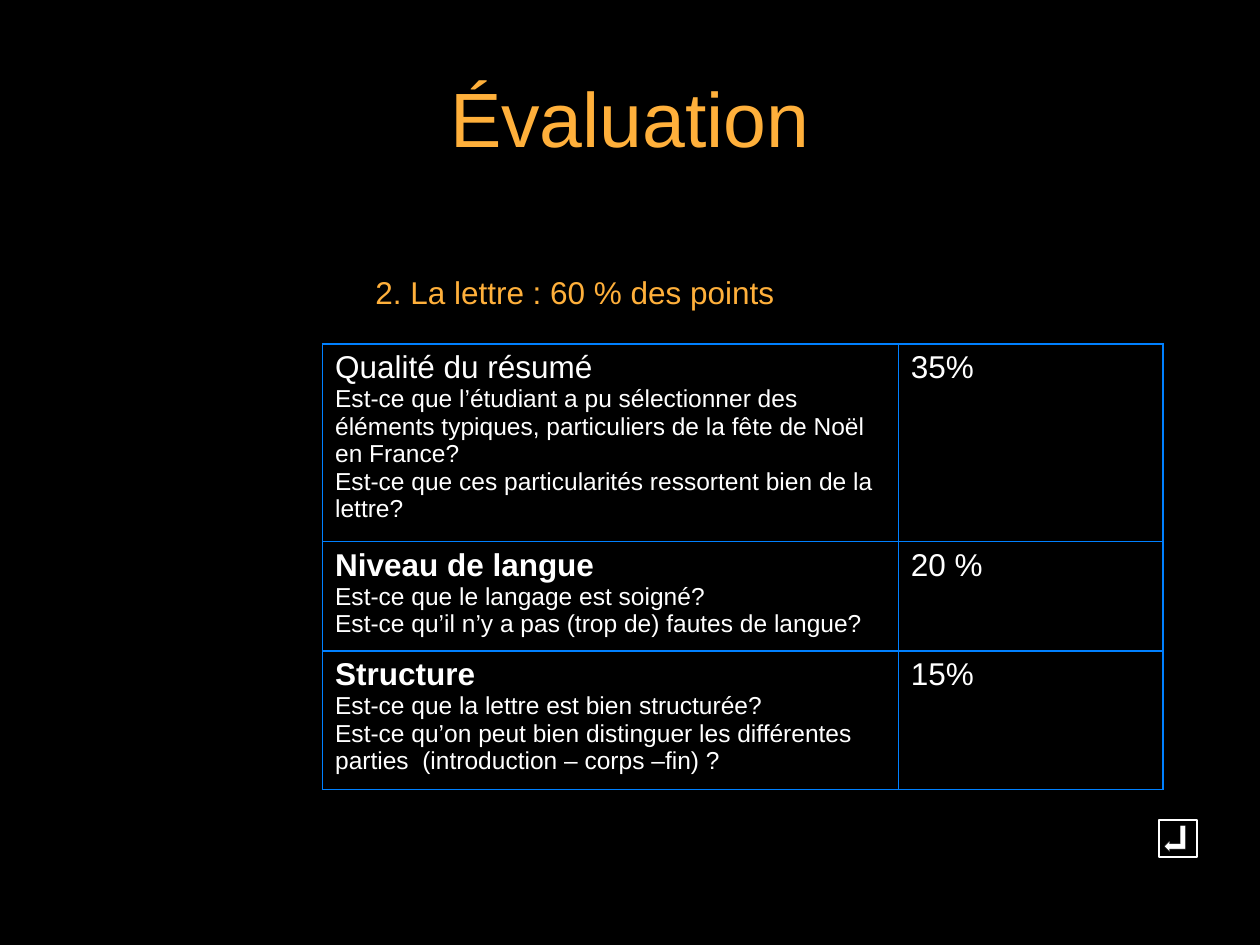
"""Build the evaluation slide with its grading table for the letter."""
import lxml.etree
import pptx
import pptx.dml.color
import pptx.enum.shapes
import pptx.enum.text
import pptx.oxml.ns
import pptx.util

Inches = pptx.util.Inches
Pt = pptx.util.Pt
RGBColor = pptx.dml.color.RGBColor
Shape = pptx.enum.shapes.MSO_SHAPE
Align = pptx.enum.text.PP_ALIGN
Anchor = pptx.enum.text.MSO_ANCHOR
qn = pptx.oxml.ns.qn

BLACK = RGBColor(0x00, 0x00, 0x00)
WHITE = RGBColor(0xFF, 0xFF, 0xFF)
ORANGE = RGBColor(0xFF, 0xB0, 0x3B)
BLUE = RGBColor(0x00, 0x80, 0xFF)
CHARCOAL = RGBColor(0x19, 0x19, 0x19)

TITLE = {"name": "Arial", "size": Pt(44)}
HEADING = {"name": "Arial", "size": Pt(18)}
BOLD_HEADING = {**HEADING, "bold": True}
QUESTION = {"name": "Arial", "size": Pt(14)}

COLUMN_WIDTHS = (4.57, 2.1)
CRITERIA = [
    (1.47, "Qualité du résumé", HEADING, "35%", [
        "Est-ce que l’étudiant a pu sélectionner des éléments typiques, "
        "particuliers de la fête de Noël en France?",
        "Est-ce que ces particularités ressortent bien de la lettre?"]),
    (0.82, "Niveau de langue", BOLD_HEADING, "20 %", [
        "Est-ce que le langage est soigné?",
        "Est-ce qu’il n’y a pas (trop de) fautes de langue?"]),
    (1.04, "Structure", BOLD_HEADING, "15%", [
        "Est-ce que la lettre est bien structurée?",
        "Est-ce qu’on peut bien distinguer les différentes parties  "
        "(introduction – corps –fin) ?"]),
]


def write_lines(frame, lines, color):
    """Write (text, format) pairs as the paragraphs of a text frame."""
    for index, (text, font_format) in enumerate(lines):
        paragraph = frame.add_paragraph() if index else frame.paragraphs[0]
        run = paragraph.add_run()
        run.text = text
        for attribute, value in font_format.items():
            setattr(run.font, attribute, value)
        run.font.color.rgb = color


def add_label(slide, box, text, font_format, align, anchor):
    """Add a one-line orange text box."""
    frame = slide.shapes.add_textbox(*map(Inches, box)).text_frame
    frame.word_wrap = True
    frame.vertical_anchor = anchor
    write_lines(frame, [(text, font_format)], ORANGE)
    frame.paragraphs[0].alignment = align


def set_borders(cell):
    """Give a cell thin blue borders on its four sides."""
    properties = cell._tc.get_or_add_tcPr()
    for side in ("a:lnL", "a:lnR", "a:lnT", "a:lnB"):
        border = lxml.etree.SubElement(properties, qn(side), w=str(Pt(1)))
        fill = lxml.etree.SubElement(border, qn("a:solidFill"))
        lxml.etree.SubElement(fill, qn("a:srgbClr"), val=str(BLUE))


def add_criteria_table(slide):
    """Add the table of criteria and their share of the points."""
    height = sum(criterion[0] for criterion in CRITERIA)
    table = slide.shapes.add_table(
        len(CRITERIA), len(COLUMN_WIDTHS), Inches(2.56), Inches(2.73),
        Inches(sum(COLUMN_WIDTHS)), Inches(height)).table
    table.first_row = table.horz_banding = False
    for column, width in zip(table.columns, COLUMN_WIDTHS):
        column.width = Inches(width)
    for row, criterion in zip(table.rows, CRITERIA):
        row_height, heading, heading_format, share, questions = criterion
        row.height = Inches(row_height)
        description = [(heading, heading_format)]
        description += [(question, QUESTION) for question in questions]
        for cell, lines in zip(row.cells, (description, [(share, HEADING)])):
            set_borders(cell)
            cell.fill.background()
            write_lines(cell.text_frame, lines, WHITE)


def add_icon_part(slide, preset, box, line_color, line_width):
    """Add an unfilled outline shape of the return button."""
    part = slide.shapes.add_shape(preset, *map(Inches, box))
    part.shadow.inherit = False
    part.fill.background()
    part.line.color.rgb = line_color
    part.line.width = Pt(line_width)
    return part


def add_return_button(slide):
    """Add the return arrow and its frame."""
    arrow = add_icon_part(slide, Shape.BENT_UP_ARROW,
                          (9.22, 6.57, 0.21, 0.17), CHARCOAL, 0.25)
    arrow.fill.solid()
    arrow.fill.fore_color.rgb = WHITE
    arrow.rotation = 270
    arrow._element.spPr.xfrm.set("flipH", "1")
    add_icon_part(slide, Shape.RECTANGLE, (9.2, 6.51, 0.3, 0.29), WHITE, 1)


def main():
    """Build and save the slide."""
    deck = pptx.Presentation()
    deck.slide_width, deck.slide_height = Inches(10), Inches(7.5)
    slide = deck.slides.add_slide(deck.slide_layouts[6])
    slide.background.fill.solid()
    slide.background.fill.fore_color.rgb = BLACK
    add_label(slide, (0.5, 0.3, 9, 1.25), "Évaluation", TITLE,
              Align.CENTER, Anchor.MIDDLE)
    add_label(slide, (2.88, 2.12, 6.62, 0.4), "2. La lettre : 60 % des points",
              HEADING, Align.LEFT, Anchor.TOP)
    add_criteria_table(slide)
    add_return_button(slide)
    deck.save("out.pptx")


if __name__ == "__main__":
    main()
